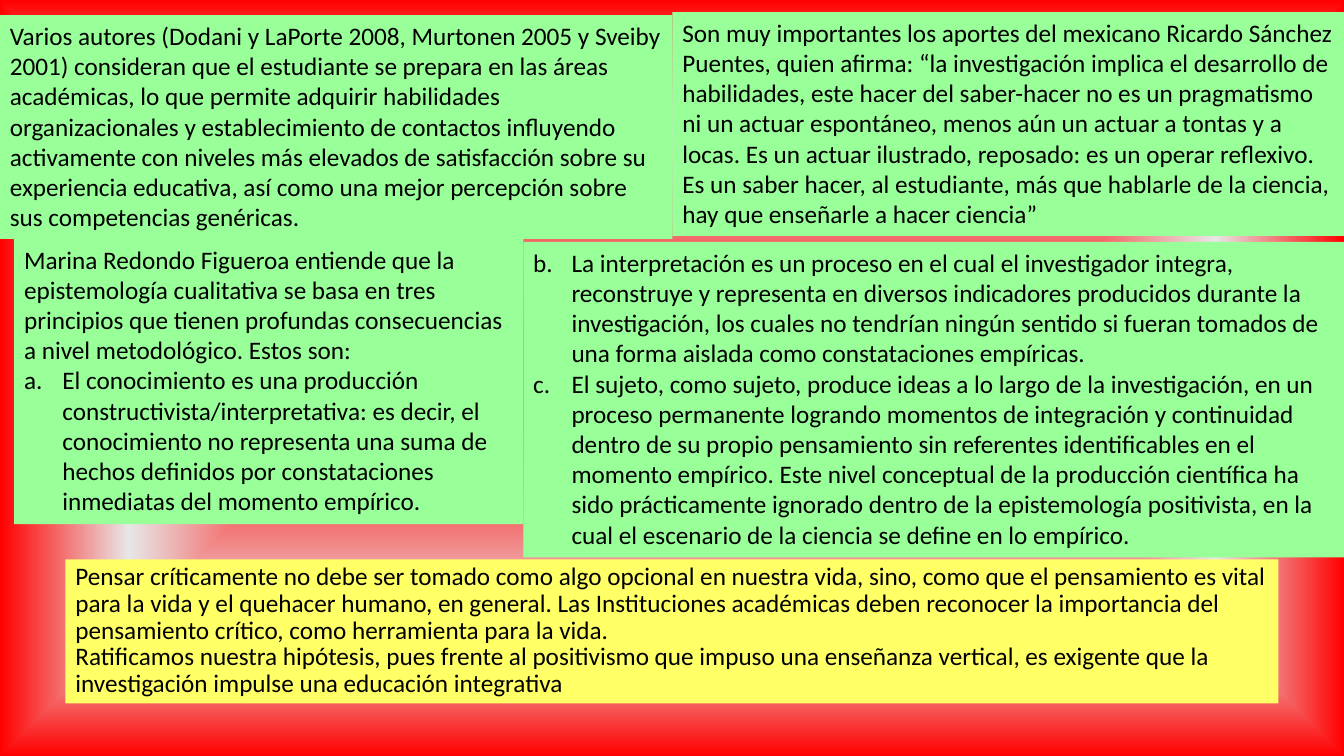
"""Build a slide of five text panels on research and critical thinking."""
from pptx import Presentation, oxml
from pptx import util as u
from pptx.dml.color import RGBColor
from pptx.enum import text
from pptx.oxml import ns

COLORS = {"green": "99FF99", "yellow": "FFFF66", "text": "000000",
          "red": "FF0000", "gray": "E7E6E6"}

AUTORES = (
    "Varios autores (Dodani y LaPorte 2008, Murtonen 2005 y Sveiby 2001) consideran que el "
    "estudiante se prepara en las áreas académicas, lo que permite adquirir habilidades "
    "organizacionales y establecimiento de contactos influyendo activamente con niveles más "
    "elevados de satisfacción sobre su experiencia educativa, así como una mejor percepción "
    "sobre sus competencias genéricas.")
APORTES = (
    "Son muy importantes los aportes del mexicano Ricardo Sánchez Puentes, quien afirma: “la "
    "investigación implica el desarrollo de habilidades, este hacer del saber-hacer no es un "
    "pragmatismo ni un actuar espontáneo, menos aún un actuar a tontas y a locas. Es un actuar "
    "ilustrado, reposado: es un operar reflexivo. Es un saber hacer, al estudiante, más que "
    "hablarle de la ciencia, hay que enseñarle a hacer ciencia”")
EPISTEMOLOGIA = (
    "Marina Redondo Figueroa entiende que la epistemología cualitativa se basa en tres "
    "principios que tienen profundas consecuencias a nivel metodológico. Estos son:")
CONOCIMIENTO = (
    "El conocimiento es una producción constructivista/interpretativa: es decir, el "
    "conocimiento no representa una suma de hechos definidos por constataciones inmediatas "
    "del momento empírico.")
INTERPRETACION = (
    "La interpretación es un proceso en el cual el investigador integra, reconstruye y "
    "representa en diversos indicadores producidos durante la investigación, los cuales no "
    "tendrían ningún sentido si fueran tomados de una forma aislada como constataciones "
    "empíricas.")
SUJETO = (
    "El sujeto, como sujeto, produce ideas a lo largo de la investigación, en un proceso "
    "permanente logrando momentos de integración y continuidad dentro de su propio pensamiento "
    "sin referentes identificables en el momento empírico. Este nivel conceptual de la "
    "producción científica ha sido prácticamente ignorado dentro de la epistemología "
    "positivista, en la cual el escenario de la ciencia se define en lo empírico.")
PENSAR = (
    "Pensar críticamente no debe ser tomado como algo opcional en nuestra vida, sino, como que "
    "el pensamiento es vital para la vida y el quehacer humano, en general. Las Instituciones "
    "académicas deben reconocer la importancia del pensamiento crítico, como herramienta para "
    "la vida.")
HIPOTESIS = (
    "Ratificamos nuestra hipótesis, pues frente al positivismo que impuso una enseñanza "
    "vertical, es exigente que la investigación impulse una educación integrativa")


def write(paragraph, content, font="Calibri", size=18, color="text", spacing=None, start=None):
    """Write formatted text, lettered from position start when given."""
    run = paragraph.add_run()
    run.text = content
    run.font.name = font
    run.font.size = u.Pt(size)
    run.font.color.rgb = RGBColor.from_string(COLORS[color])
    if spacing:
        paragraph.line_spacing = u.Pt(spacing)
    if start:
        properties = paragraph._p.get_or_add_pPr()
        properties.set("marL", str(u.Inches(0.38)))
        properties.set("indent", str(u.Inches(-0.38)))
        properties.append(oxml.parse_xml(
            f'<a:buAutoNum {ns.nsdecls("a")} type="alphaLcPeriod" startAt="{start}"/>'))


class Deck:
    """Hold the presentation style and the current slide."""

    def __init__(self):
        """Start a widescreen presentation with one blank slide."""
        self.presentation = Presentation()
        self.presentation.slide_width = u.Inches(13.33)
        self.presentation.slide_height = u.Inches(7.5)
        self.slide = self.presentation.slides.add_slide(self.presentation.slide_layouts[6])

    def background(self, stops):
        """Fill the background with a rectangular gradient."""
        self.slide.background.fill.gradient()
        gradient = self.slide._element.xpath(".//p:bgPr/a:gradFill")[0]
        marks = "".join(f'<a:gs pos="{position * 1000}"><a:srgbClr val="{COLORS[color]}"/></a:gs>'
                        for position, color in stops)
        gradient.getparent().replace(gradient, oxml.parse_xml(
            f'<a:gradFill {ns.nsdecls("a")} rotWithShape="1"><a:gsLst>{marks}</a:gsLst>'
            '<a:path path="rect"><a:fillToRect l="50000" t="50000" r="50000" b="50000"/>'
            '</a:path></a:gradFill>'))

    def panel(self, box, paragraphs, fill="green", spacing=None):
        """Add a filled text box from pairs of text and list start."""
        shape = self.slide.shapes.add_textbox(*map(u.Inches, box))
        shape.fill.solid()
        shape.fill.fore_color.rgb = RGBColor.from_string(COLORS[fill])
        frame = shape.text_frame
        frame.word_wrap = True
        frame.auto_size = text.MSO_AUTO_SIZE.SHAPE_TO_FIT_TEXT
        for index, (content, start) in enumerate(paragraphs):
            paragraph = frame.add_paragraph() if index else frame.paragraphs[0]
            write(paragraph, content, spacing=spacing, start=start)


def main():
    """Build and save the slide."""
    deck = Deck()
    deck.background([(12, "red"), (66, "gray"), (100, "red")])
    deck.panel((0, 0.15, 6.67, 2.22), [(AUTORES, None)])
    deck.panel((6.67, 0.12, 6.67, 2.22), [(APORTES, None)])
    deck.panel((0.14, 2.37, 5.05, 2.83), [(EPISTEMOLOGIA, None), (CONOCIMIENTO, 1)])
    deck.panel((5.19, 2.4, 8.15, 3.13), [(INTERPRETACION, 2), (SUJETO, 2)])
    deck.panel((0.65, 5.55, 12.03, 1.43), [(PENSAR, None), (HIPOTESIS, None)],
               fill="yellow", spacing=19)
    deck.presentation.save("out.pptx")


if __name__ == "__main__":
    main()
